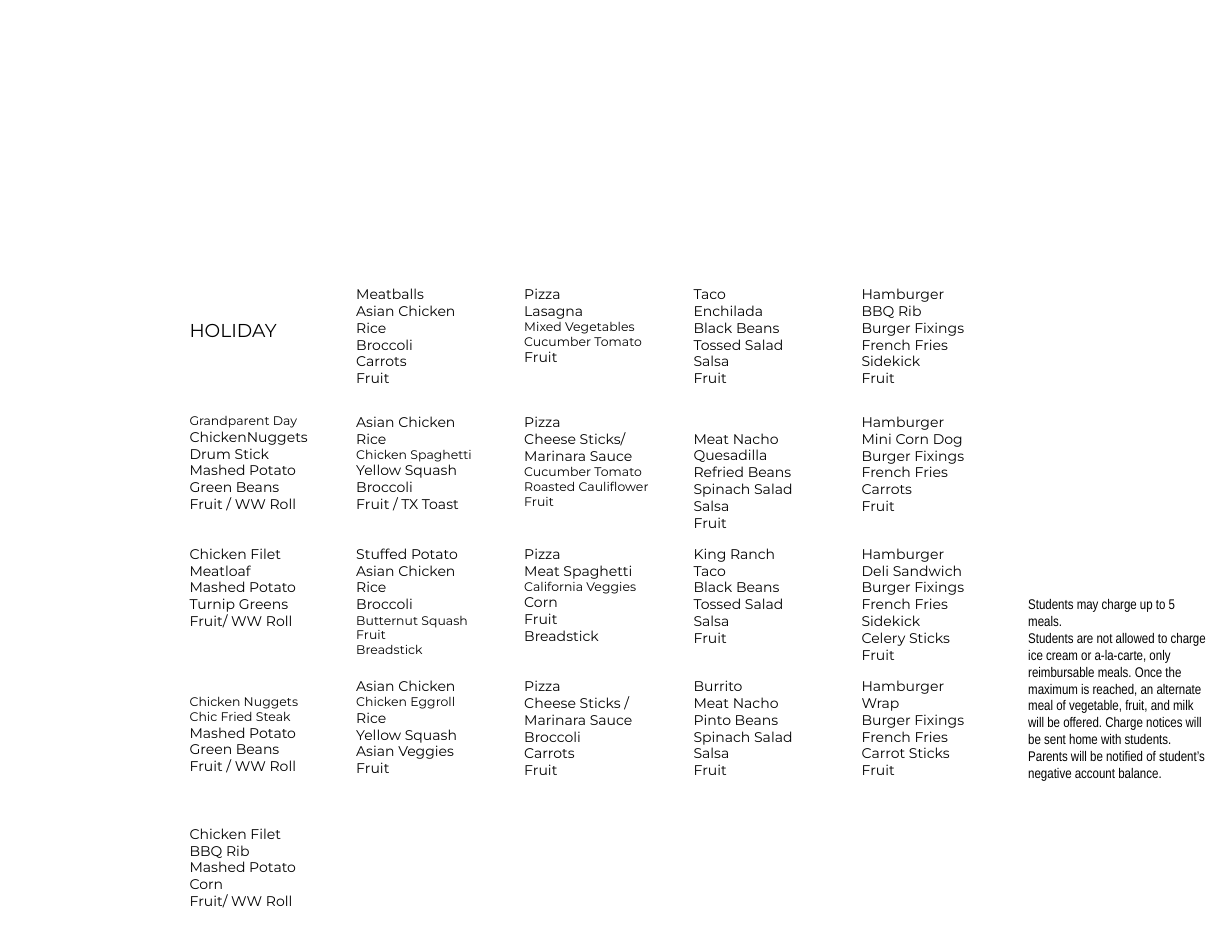
from pptx import Presentation, util as u
from pptx.dml.color import RGBColor
from pptx.enum import text

BLACK = RGBColor(0, 0, 0)
LINE_H = 0.38
PAD = 0.25
COL_W = 3.38
COLS = (4.05, 7.83, 11.64, 15.48, 19.29)
ROWS = (6.35, 9.25, 12.24, 15.24, 18.21)
LEAD_LINES = {(0, 0): 2, (1, 3): 1, (3, 0): 1, (4, 0): 1}

BODY = {"name": "Montserrat", "size": u.Pt(9)}
SMALL = {"name": "Montserrat", "size": u.Pt(8)}
LARGE = {"name": "Montserrat", "size": u.Pt(12)}
NOTICE = {"name": "Arial Narrow", "size": u.Pt(9)}

MENU = (
    (
        (("HOLIDAY", LARGE),),
        ("Meatballs", "Asian Chicken", "Rice", "Broccoli", "Carrots", "Fruit"),
        ("Pizza", "Lasagna", ("Mixed Vegetables", SMALL),
         ("Cucumber Tomato", SMALL), "Fruit"),
        ("Taco", "Enchilada", "Black Beans", "Tossed Salad", "Salsa", "Fruit"),
        ("Hamburger", "BBQ Rib", "Burger Fixings", "French Fries",
         "Sidekick", "Fruit"),
    ),
    (
        (("Grandparent Day", SMALL), "ChickenNuggets", "Drum Stick",
         "Mashed Potato", "Green Beans", "Fruit / WW Roll"),
        ("Asian Chicken", "Rice", ("Chicken Spaghetti", SMALL),
         "Yellow Squash", "Broccoli", "Fruit / TX Toast"),
        ("Pizza", "Cheese Sticks/", "Marinara Sauce",
         ("Cucumber Tomato", SMALL), ("Roasted Cauliflower", SMALL),
         ("Fruit", SMALL)),
        ("Meat Nacho", "Quesadilla", "Refried Beans", "Spinach Salad",
         "Salsa", "Fruit"),
        ("Hamburger", "Mini Corn Dog", "Burger Fixings", "French Fries",
         "Carrots", "Fruit"),
    ),
    (
        ("Chicken Filet", "Meatloaf", "Mashed Potato", "Turnip Greens",
         "Fruit/ WW Roll"),
        ("Stuffed Potato", "Asian Chicken", "Rice", "Broccoli",
         ("Butternut Squash", SMALL), ("Fruit", SMALL), ("Breadstick", SMALL)),
        ("Pizza", "Meat Spaghetti", ("California Veggies", SMALL), "Corn",
         "Fruit", "Breadstick"),
        ("King Ranch", "Taco", "Black Beans", "Tossed Salad", "Salsa", "Fruit"),
        ("Hamburger", "Deli Sandwich", "Burger Fixings", "French Fries",
         "Sidekick", "Celery Sticks", "Fruit"),
    ),
    (
        (("Chicken Nuggets", SMALL), ("Chic Fried Steak", SMALL),
         "Mashed Potato", "Green Beans", "Fruit / WW Roll"),
        ("Asian Chicken", ("Chicken Eggroll", SMALL), "Rice", "Yellow Squash",
         "Asian Veggies", "Fruit"),
        ("Pizza", "Cheese Sticks /", "Marinara Sauce", "Broccoli", "Carrots",
         "Fruit"),
        ("Burrito", "Meat Nacho", "Pinto Beans", "Spinach Salad", "Salsa",
         "Fruit"),
        ("Hamburger", "Wrap", "Burger Fixings", "French Fries",
         "Carrot Sticks", "Fruit"),
    ),
    (
        ("Chicken Filet", "BBQ Rib", "Mashed Potato", "Corn", "Fruit/ WW Roll"),
    ),
)

CHARGE_POLICY = (
    "Students may charge up to 5 meals.",
    "Students are not allowed to charge ice cream or a-la-carte, only "
    "reimbursable meals. Once the maximum is reached, an alternate meal of "
    "vegetable, fruit, and milk will be offered. Charge notices will be sent "
    "home with students. Parents will be notified of student’s negative "
    "account balance.",
)


def write_lines(sp, lines, fmt, lead=0):
    tf = sp.text_frame
    frame = {
        "word_wrap": True,
        "auto_size": text.MSO_AUTO_SIZE.SHAPE_TO_FIT_TEXT,
        "vertical_anchor": text.MSO_ANCHOR.TOP,
        "margin_top": u.Cm(PAD / 2 + lead),
    }
    for key, value in frame.items():
        setattr(tf, key, value)
    for i, line in enumerate(lines):
        words, line_fmt = (line, fmt) if isinstance(line, str) else line
        p = tf.add_paragraph() if i else tf.paragraphs[0]
        p.alignment = text.PP_ALIGN.LEFT
        r = p.add_run()
        r.text = words
        for key, value in line_fmt.items():
            setattr(r.font, key, value)
        r.font.color.rgb = BLACK


def add_day(s, box, dishes, lead):
    x, y, w, h = map(u.Cm, box)
    outline = s.shapes.build_freeform(x, y)
    outline.add_line_segments([(x + w, y), (x + w, y + h), (x, y + h)])
    sp = outline.convert_to_shape()
    sp.shadow.inherit = False
    sp.fill.background()
    sp.line.fill.background()
    write_lines(sp, dishes, BODY, lead)


def dish_height(dish):
    fmt = BODY if isinstance(dish, str) else dish[1]
    return LINE_H * fmt["size"] / BODY["size"]


def add_menu(s):
    for row, (top, week) in enumerate(zip(ROWS, MENU)):
        for col, (left, dishes) in enumerate(zip(COLS, week)):
            lead = LEAD_LINES.get((row, col), 0) * LINE_H
            height = PAD + lead + sum(map(dish_height, dishes))
            add_day(s, (left, top, COL_W, height), dishes, lead)


def add_notice(s, box):
    write_lines(s.shapes.add_textbox(*map(u.Cm, box)), CHARGE_POLICY, NOTICE)


def main():
    prs = Presentation()
    prs.slide_width, prs.slide_height = u.Cm(27.94), u.Cm(21.59)
    s = prs.slides.add_slide(prs.slide_layouts[6])
    add_menu(s)
    add_notice(s, (23.07, 13.39, 4.65, 4.88))
    prs.save("out.pptx")


if __name__ == "__main__":
    main()
